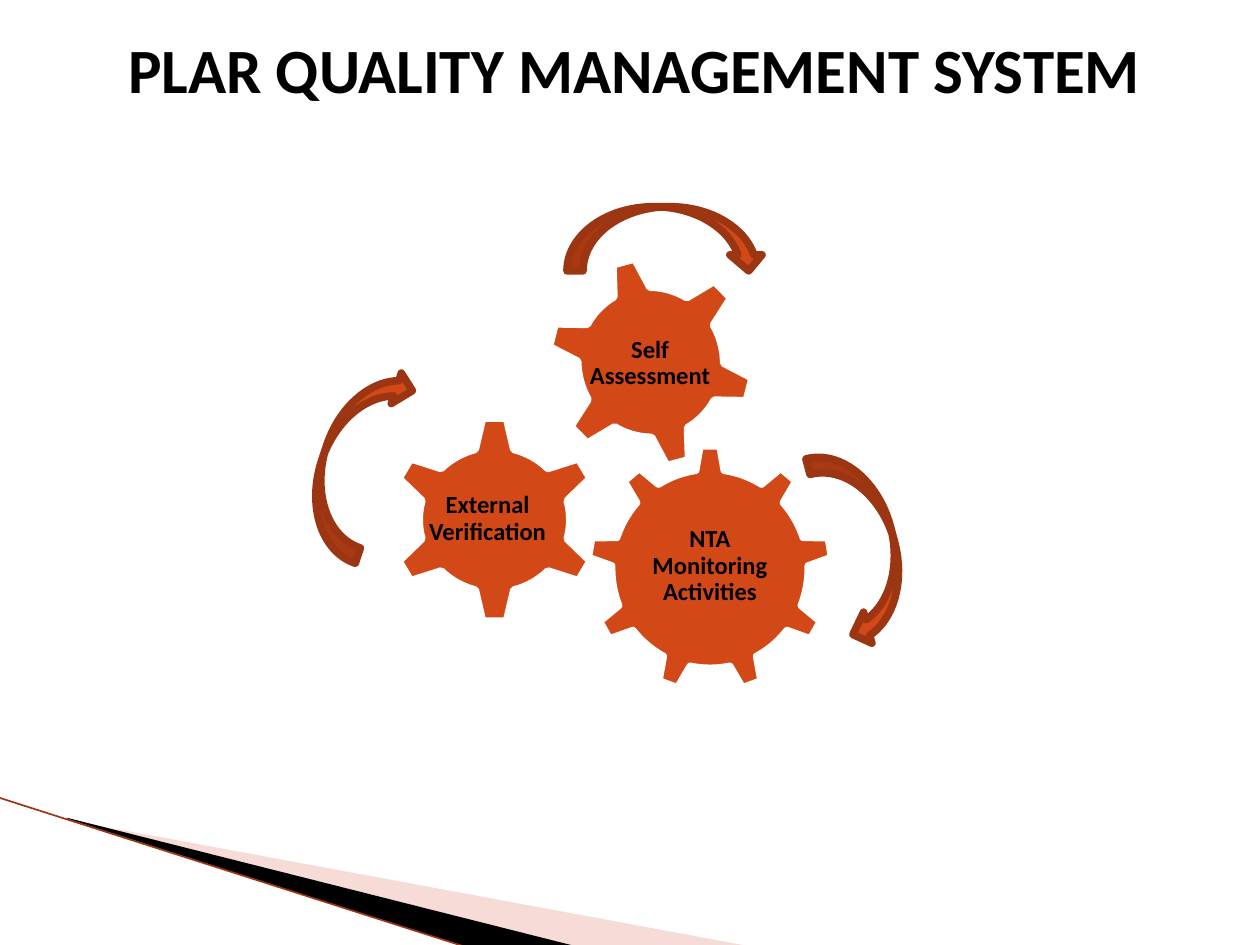
from lxml import etree
from pptx import Presentation
from pptx import util as u
from pptx.dml.color import RGBColor
from pptx.enum import shapes, text
from pptx.oxml.ns import qn

I = u.Inches
G = shapes.MSO_SHAPE
ORANGE, BROWN, WHITE, BLACK = "D34817", "9C3511", "FFFFFF", "000000"


def color(fmt, value):
    fmt.rgb = RGBColor.from_string(value)


def add_text(parent, box, words, size, frame, para):
    tf = parent.add_textbox(*map(I, box)).text_frame
    for name, value in frame.items():
        setattr(tf, name, value)
    p = tf.paragraphs[0]
    for name, value in para.items():
        setattr(p, name, value)
    r = p.add_run()
    r.text = words
    for name, value in {"name": "Calibri", "size": u.Pt(size), "bold": True}.items():
        setattr(r.font, name, value)
    color(r.font.color, BLACK)


prs = Presentation()
prs.slide_width, prs.slide_height = I(10), I(7.5)
s = prs.slides.add_slide(prs.slide_layouts[6])

# Corner wedges
wedges = [
    ([(0.55, 6.51), (5.95, 7.51), (4.56, 7.51), (0.55, 6.5)], "E9A59D", 40),
    ([(0.53, 6.49), (4.57, 7.51), (3.72, 7.52), (0.54, 6.5)], BLACK, 100),
]
for points, fill, opacity in wedges:
    pts = [(I(x), I(y)) for x, y in points]
    fb = s.shapes.build_freeform(*pts[0], scale=1.0)
    fb.add_line_segments(pts[1:], close=True)
    sp = fb.convert_to_shape()
    sp.shadow.inherit = False
    sp.fill.solid()
    color(sp.fill.fore_color, fill)
    sp.line.fill.background()
    if opacity < 100:
        clr = sp.fill._xPr.find(qn("a:solidFill"))[0]
        etree.SubElement(clr, qn("a:alpha"), val=str(opacity * 1000))

# Corner edge line
edge = s.shapes.add_connector(shapes.MSO_CONNECTOR.STRAIGHT,
                              I(-0.01), I(6.33), I(3.71), I(7.52))
color(edge.line.color, BROWN)
edge.line.width = u.Pt(0.95)
etree.SubElement(edge._element.spPr, qn("a:effectLst"))

# Title
add_text(s.shapes, (0.23, 0.19, 9.61, 0.71), "PLAR QUALITY MANAGEMENT SYSTEM", 36,
         {"word_wrap": True, "auto_size": text.MSO_AUTO_SIZE.SHAPE_TO_FIT_TEXT},
         {"alignment": text.PP_ALIGN.CENTER})

# Gears with labels, then the arrows: preset, box, rotation, outline, label, label box
parts = [
    (G.GEAR_9, (4.66, 3.53, 1.95, 1.97), 0, WHITE,
     "NTA Monitoring Activities", (5.05, 3.99, 1.17, 1.01)),
    (G.GEAR_6, (3.08, 3.3, 1.69, 1.65), 0, WHITE,
     "External Verification", (3.32, 3.71, 1.1, 0.82)),
    (G.GEAR_6, (4.34, 2.03, 1.65, 1.69), 345, WHITE,
     "Self Assessment", (4.66, 2.41, 1, 0.95)),
]
arrows = [(2.04, 3.39, 288.3), (6.06, 4.08, 75), (4.5, 1.64, 0)]
parts += [(G.CURVED_DOWN_ARROW, (x, y, 1.57, 0.51), turn, BROWN, None, None)
          for x, y, turn in arrows]
label_frame = {"word_wrap": True, "vertical_anchor": text.MSO_ANCHOR.MIDDLE}
label_frame |= {f"margin_{side}": I(0.01) for side in ("left", "top", "right", "bottom")}
label_para = {"alignment": text.PP_ALIGN.CENTER, "line_spacing": 0.9}

for preset, box, turn, outline, label, label_box in parts:
    parent = s.shapes.add_group_shape().shapes if label else s.shapes
    sp = parent.add_shape(preset, *map(I, box))
    sp.rotation = turn
    sp.shadow.inherit = False
    sp.fill.solid()
    color(sp.fill.fore_color, ORANGE)
    color(sp.line.color, outline)
    sp.line.width = u.Pt(4.33)
    if label:
        add_text(parent, label_box, label, 14, label_frame, label_para)

prs.save("out.pptx")
